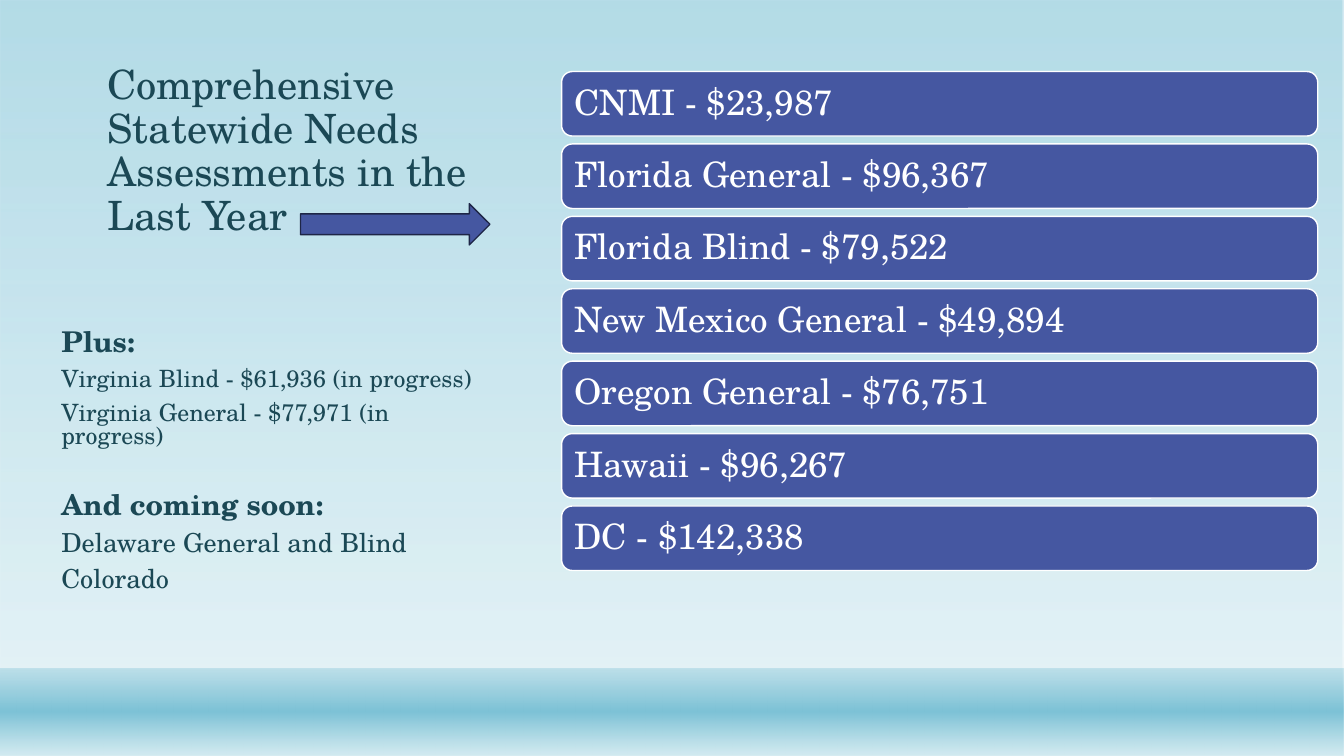
from lxml import etree
from pptx import Presentation
from pptx.dml.color import RGBColor
from pptx.enum.shapes import MSO_SHAPE
from pptx.enum.text import MSO_ANCHOR, PP_ALIGN
from pptx.oxml.ns import qn
from pptx.util import Inches, Pt

RECTANGLE = MSO_SHAPE.RECTANGLE
ROUNDED = MSO_SHAPE.ROUNDED_RECTANGLE
RIGHT_ARROW = MSO_SHAPE.RIGHT_ARROW
TOP, MIDDLE, BOTTOM = MSO_ANCHOR.TOP, MSO_ANCHOR.MIDDLE, MSO_ANCHOR.BOTTOM
LEFT = PP_ALIGN.LEFT

FONT = "TeX Gyre Schola"
TEAL, INDIGO, NAVY, WHITE = "1B4855", "4557A1", "1E2647", "FFFFFF"
SKY, PALE = "7DC2D6", "D4EBF1"
SLIDE_WIDTH, SLIDE_HEIGHT = 13.33, 7.5

TITLE = "Comprehensive Statewide Needs Assessments in the Last Year"
HEADING = {"size": Pt(20.4), "bold": True}
# Text, font format, space before in points
UPCOMING = [
    ("Plus:", HEADING, 0),
    ("Virginia Blind - $61,936 (in progress)", {"size": Pt(17)}, 8),
    ("Virginia General - $77,971 (in progress)", {"size": Pt(17)}, 8),
    ("And coming soon:", HEADING, 32),
    ("Delaware General and Blind", {"size": Pt(18.7)}, 8),
    ("Colorado", {"size": Pt(18.7)}, 8),
]
ASSESSMENTS = [
    ("CNMI", "$23,987"),
    ("Florida General", "$96,367"),
    ("Florida Blind", "$79,522"),
    ("New Mexico General", "$49,894"),
    ("Oregon General", "$76,751"),
    ("Hawaii", "$96,267"),
    ("DC", "$142,338"),
]


def color(hex_value):
    return RGBColor.from_string(hex_value)


def apply_format(target, values):
    for name, value in values.items():
        setattr(target, name, value)


def write_paragraph(paragraph, text, font, hex_color, spacing, before=0):
    paragraph.text = text
    apply_format(paragraph, {"alignment": LEFT, "line_spacing": spacing,
                             "space_before": Pt(before)})
    apply_format(paragraph.font, {"name": FONT, **font})
    paragraph.font.color.rgb = color(hex_color)


def add_plain_shape(slide, kind, box):
    shape = slide.shapes.add_shape(kind, *map(Inches, box))
    shape.shadow.inherit = False
    return shape


def add_solid_shape(slide, kind, box, fill, line):
    shape = add_plain_shape(slide, kind, box)
    shape.fill.solid()
    shape.fill.fore_color.rgb = color(fill)
    shape.line.color.rgb = color(line)
    shape.line.width = Pt(1)
    return shape


def add_gradient_band(slide, box, stops):
    """Fill a box from top to bottom; stops are (position %, colour, opacity %)."""
    band = add_plain_shape(slide, RECTANGLE, box)
    band.line.fill.background()
    band.fill.gradient()
    band.fill.gradient_angle = 270
    stop_list = band.element.spPr.find(".//" + qn("a:gsLst"))
    for default_stop in list(stop_list):
        stop_list.remove(default_stop)
    for position, hex_color, opacity in stops:
        stop = etree.SubElement(stop_list, qn("a:gs"), pos=str(position * 1000))
        stop_color = etree.SubElement(stop, qn("a:srgbClr"), val=hex_color)
        etree.SubElement(stop_color, qn("a:alpha"), val=str(opacity * 1000))


def add_backdrop(slide, box):
    left, top, width, height = box
    water_height = 0.87
    add_gradient_band(slide, box, [(0, SKY, 58), (88, PALE, 65)])
    add_gradient_band(
        slide, (left, top + height - water_height, width, water_height),
        [(1, SKY, 38), (49, SKY, 100), (100, PALE, 89)])


def add_text_frame(slide, box, anchor):
    frame = slide.shapes.add_textbox(*map(Inches, box)).text_frame
    apply_format(frame, {"word_wrap": True, "vertical_anchor": anchor})
    return frame


def add_title(slide, box):
    """Place the title and the arrow that follows its last line."""
    left, top, _, _ = box
    frame = add_text_frame(slide, box, BOTTOM)
    write_paragraph(frame.paragraphs[0], TITLE, {"size": Pt(28.8)}, TEAL, 0.9)
    add_solid_shape(slide, RIGHT_ARROW, (left + 2.01, top + 1.46, 1.88, 0.41),
                    INDIGO, NAVY)


def add_upcoming(slide, box):
    frame = add_text_frame(slide, box, TOP)
    for index, (text, font, before) in enumerate(UPCOMING):
        paragraph = frame.add_paragraph() if index else frame.paragraphs[0]
        write_paragraph(paragraph, text, font, TEAL, 0.8, before)


def add_assessment_bars(slide, box):
    left, top, width, height = box
    bar_height = 0.64
    pitch = (height - bar_height) / (len(ASSESSMENTS) - 1)
    for row, (agency, cost) in enumerate(ASSESSMENTS):
        bar = add_solid_shape(slide, ROUNDED,
                              (left, top + row * pitch, width, bar_height),
                              INDIGO, WHITE)
        frame = bar.text_frame
        inset = Inches(0.1)
        apply_format(frame, {"word_wrap": True, "vertical_anchor": MIDDLE,
                             "margin_left": inset, "margin_right": inset,
                             "margin_top": 0, "margin_bottom": 0})
        write_paragraph(frame.paragraphs[0], f"{agency} - {cost}",
                        {"size": Pt(25)}, WHITE, 0.9)


def main():
    presentation = Presentation()
    presentation.slide_width = Inches(SLIDE_WIDTH)
    presentation.slide_height = Inches(SLIDE_HEIGHT)
    slide = presentation.slides.add_slide(presentation.slide_layouts[6])
    add_backdrop(slide, (0, 0, SLIDE_WIDTH, SLIDE_HEIGHT))
    add_title(slide, (0.97, 0.56, 4.27, 1.86))
    add_upcoming(slide, (0.51, 3.23, 4.35, 2.78))
    add_assessment_bars(slide, (5.57, 0.71, 7.5, 4.95))
    presentation.save("out.pptx")


if __name__ == "__main__":
    main()
